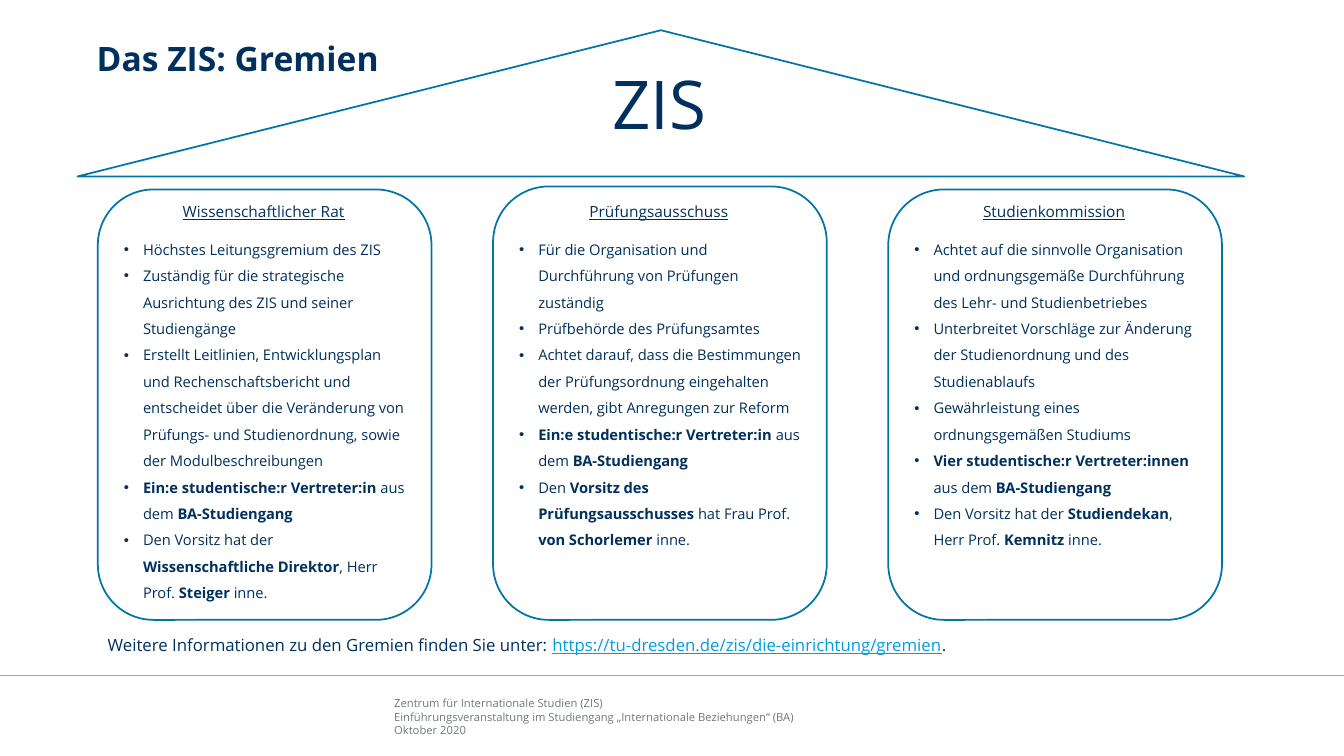
"""Builds the slide showing the ZIS committees as pillars under one roof."""
from lxml import etree
from pptx import Presentation
from pptx.dml.color import RGBColor
from pptx.enum import shapes, text
from pptx.oxml import ns
from pptx.util import Inches, Pt

NAVY = RGBColor(0x00, 0x30, 0x5E)
BLUE = RGBColor(0x00, 0x75, 0xA6)
CYAN = RGBColor(0x00, 0x9E, 0xE0)
SLATE = RGBColor(0x72, 0x78, 0x79)
RULE_GREY = RGBColor(0xA6, 0xA6, 0xA6)
LEFT, CENTER = text.PP_ALIGN.LEFT, text.PP_ALIGN.CENTER

deck = Presentation()
deck.slide_width, deck.slide_height = Inches(13.33), Inches(7.5)
slide = deck.slides.add_slide(deck.slide_layouts[6])


def add_text(box, paragraphs, size, color=NAVY, align=LEFT, inset=True, bullets=False):
    """Add a text box; each paragraph is a list of (text, style) runs."""
    frame = slide.shapes.add_textbox(*map(Inches, box)).text_frame
    frame.word_wrap = True
    if not inset:
        frame.margin_left = frame.margin_right = frame.margin_top = frame.margin_bottom = 0
    for index, runs in enumerate(paragraphs):
        paragraph = frame.paragraphs[0] if index == 0 else frame.add_paragraph()
        paragraph.alignment = align
        if bullets:
            paragraph.line_spacing = 1.5
            properties = paragraph._p.get_or_add_pPr()
            properties.set("marL", str(Inches(0.19)))
            properties.set("indent", str(Inches(-0.19)))
            etree.SubElement(properties, ns.qn("a:buFont")).set("typeface", "Arial")
            etree.SubElement(properties, ns.qn("a:buChar")).set("char", "•")
        for words, style in runs:
            run = paragraph.add_run()
            run.text = words
            run.font.name, run.font.size = "Open Sans", Pt(size)
            run.font.bold = style == "bold"
            run.font.underline = style in ("underline", "link")
            run.font.color.rgb = CYAN if style == "link" else color
    return frame


def add_outline(preset, box):
    """Add an unfilled shape with a blue outline."""
    outline = slide.shapes.add_shape(preset, *map(Inches, box))
    outline.shadow.inherit = False
    outline.fill.background()
    outline.line.color.rgb = BLUE
    outline.line.width = Pt(1.25)


footer_lines = [
    "Zentrum für Internationale Studien (ZIS)",
    "Einführungsveranstaltung im Studiengang „Internationale Beziehungen“ (BA)",
    "Oktober 2020",
]
footer = add_text((3.91, 6.91, 5.67, 0.4), [[(line, "")] for line in footer_lines],
                  8, SLATE, inset=False)
footer.vertical_anchor = text.MSO_ANCHOR.BOTTOM

footer_rule = slide.shapes.add_connector(
    shapes.MSO_CONNECTOR.STRAIGHT, 0, Inches(6.7), Inches(13.33), Inches(6.7))
footer_rule.line.color.rgb = RULE_GREY
footer_rule.line.width = Pt(1)
etree.SubElement(footer_rule._element.spPr, ns.qn("a:effectLst"))

add_text((0.96, 0.38, 11.57, 0.75), [[("Das ZIS: Gremien", "bold")]], 24, inset=False)
add_outline(shapes.MSO_SHAPE.ISOSCELES_TRIANGLE, (0.77, 0.3, 11.57, 1.45))
add_text((5.35, 0.57, 2.38, 0.91), [[("ZIS", "")]], 48, align=CENTER)

committees = [
    ("Wissenschaftlicher Rat", 1.88, [
        "Höchstes Leitungsgremium des ZIS",
        "Zuständig für die strategische Ausrichtung des ZIS und seiner Studiengänge",
        "Erstellt Leitlinien, Entwicklungsplan und Rechenschaftsbericht und entscheidet über "
        "die Veränderung von Prüfungs- und Studienordnung, sowie der Modulbeschreibungen",
        "**Ein:e studentische:r Vertreter:in** aus dem **BA-Studiengang**",
        "Den Vorsitz hat der **Wissenschaftliche Direktor**, Herr Prof. **Steiger** inne.",
    ]),
    ("Prüfungsausschuss", 1.85, [
        "Für die Organisation und Durchführung von Prüfungen zuständig",
        "Prüfbehörde des Prüfungsamtes",
        "Achtet darauf, dass die Bestimmungen der Prüfungsordnung eingehalten werden, "
        "gibt Anregungen zur Reform",
        "**Ein:e studentische:r Vertreter:in **aus dem **BA-Studiengang**",
        "Den **Vorsitz des Prüfungsausschusses **hat Frau Prof. **von Schorlemer** inne.",
    ]),
    ("Studienkommission", 1.88, [
        "Achtet auf die sinnvolle Organisation und ordnungsgemäße Durchführung des Lehr- "
        "und Studienbetriebes",
        "Unterbreitet Vorschläge zur Änderung der Studienordnung und des Studienablaufs",
        "Gewährleistung eines ordnungsgemäßen Studiums",
        "**Vier studentische:r Vertreter:innen **aus dem **BA-Studiengang**",
        "Den Vorsitz hat der **Studiendekan**, Herr Prof. **Kemnitz** inne.",
    ]),
]
pillar_bottom = 6.15
for column, (committee, pillar_top, duties) in enumerate(committees):
    left = 0.97 + 3.92 * column
    add_outline(shapes.MSO_SHAPE.ROUNDED_RECTANGLE,
                (left, pillar_top, 3.31, pillar_bottom - pillar_top))
    add_text((left + 0.22, 1.96, 2.85, 0.29), [[(committee, "underline")]], 11, align=CENTER)
    duty_runs = [
        [(part, "bold" if position % 2 else "")
         for position, part in enumerate(duty.split("**")) if part]
        for duty in duties
    ]
    add_text((left + 0.16, 2.25, 3.02, 3.81), duty_runs, 10.5, bullets=True)

add_text((0.97, 6.25, 11.47, 0.3), [[
    ("Weitere Informationen zu den Gremien finden Sie unter: ", ""),
    ("https://tu-dresden.de/zis/die-einrichtung/gremien", "link"),
    (".", ""),
]], 12)

deck.save("out.pptx")
